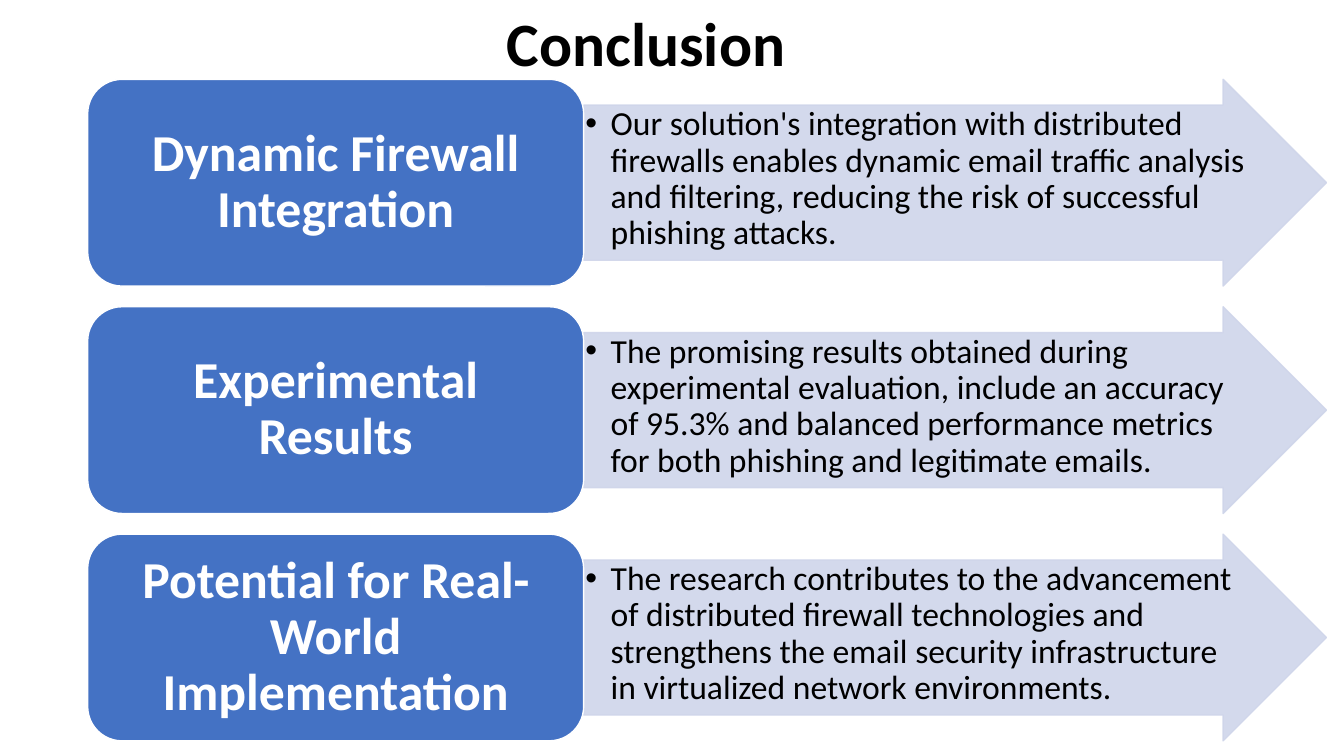
from lxml.etree import SubElement
from pptx import Presentation
from pptx.dml.color import RGBColor
from pptx.enum.shapes import MSO_SHAPE
from pptx.enum.text import MSO_ANCHOR, MSO_AUTO_SIZE, PP_ALIGN
from pptx.oxml.ns import qn
from pptx.util import Cm, Pt

BLACK = RGBColor(0x00, 0x00, 0x00)
WHITE = RGBColor(0xFF, 0xFF, 0xFF)
BLUE = RGBColor(0x44, 0x72, 0xC4)
PALE = RGBColor(0xCF, 0xD5, 0xEA)

FONT = "Calibri"
LEFT, TOP = 2.21, 2.0
BOX_W, ARROW_W = 12.5, 18.72
ROW_H, PITCH = 5.21, 5.73

ROWS = [
    ("Dynamic Firewall Integration",
     "Our solution's integration with distributed firewalls enables dynamic "
     "email traffic analysis and filtering, reducing the risk of successful "
     "phishing attacks."),
    ("Experimental Results",
     "The promising results obtained during experimental evaluation, include "
     "an accuracy of 95.3% and balanced performance metrics for both phishing "
     "and legitimate emails."),
    ("Potential for Real-World Implementation",
     "The research contributes to the advancement of distributed firewall "
     "technologies and strengthens the email security infrastructure in "
     "virtualized network environments."),
]


def write(shape, text, size, color=BLACK, bold=False, align=PP_ALIGN.CENTER,
          anchor=MSO_ANCHOR.MIDDLE, pad=(0.25, 0.13), space=1.0):
    """Put one formatted paragraph in the shape; pad is (side, top) in cm."""
    frame = shape.text_frame
    frame.word_wrap = True
    frame.vertical_anchor = anchor
    frame.margin_left = frame.margin_right = Cm(pad[0])
    frame.margin_top = frame.margin_bottom = Cm(pad[1])
    para = frame.paragraphs[0]
    para.alignment = align
    para.line_spacing = space
    run = para.add_run()
    run.text = text
    font = run.font
    font.name, font.size, font.bold = FONT, Pt(size), bold
    font.color.rgb = color
    return para


def bullet(para, indent):
    props = para._p.get_or_add_pPr()
    props.set("marL", str(indent))
    props.set("indent", str(-indent))
    SubElement(props, qn("a:buFont"), typeface="Arial")
    SubElement(props, qn("a:buChar"), char="•")


def fade(shape, percent):
    """Set the opacity of the fill and the line."""
    for color in shape._element.spPr.iter(qn("a:srgbClr")):
        SubElement(color, qn("a:alpha"), val=str(percent * 1000))


def block(slide, kind, left, top, width, fill, line):
    shape = slide.shapes.add_shape(
        kind, Cm(left), Cm(top), Cm(width), Cm(ROW_H))
    shape.shadow.inherit = False
    shape.fill.solid()
    shape.fill.fore_color.rgb = fill
    shape.line.color.rgb = line
    shape.line.width = Pt(1)
    return shape


def add_arrow(slide, top, text):
    arrow = block(slide, MSO_SHAPE.RIGHT_ARROW, LEFT + BOX_W, top, ARROW_W,
                  PALE, PALE)
    arrow.adjustments[0] = 0.75
    arrow.adjustments[1] = 0.5
    fade(arrow, 90)
    para = write(arrow, text, 24, align=PP_ALIGN.LEFT, anchor=MSO_ANCHOR.TOP,
                 pad=(0.04, 0.04), space=0.9)
    bullet(para, Cm(0.64))


def add_box(slide, top, text):
    box = block(slide, MSO_SHAPE.ROUNDED_RECTANGLE, LEFT, top, BOX_W,
                BLUE, WHITE)
    write(box, text, 37, color=WHITE, bold=True, pad=(0.38, 0.2), space=0.9)


def add_title(slide, text):
    title = slide.shapes.title
    title.left, title.top = Cm(7.82), Cm(0)
    title.width, title.height = Cm(16.94), Cm(2.13)
    write(title, text, 44, bold=True, anchor=MSO_ANCHOR.TOP)
    title.text_frame.auto_size = MSO_AUTO_SIZE.SHAPE_TO_FIT_TEXT


def main():
    deck = Presentation()
    deck.slide_width, deck.slide_height = Cm(33.87), Cm(19.05)
    slide = deck.slides.add_slide(deck.slide_layouts[5])
    add_title(slide, "Conclusion")
    for row, (head, body) in enumerate(ROWS):
        top = TOP + row * PITCH
        add_arrow(slide, top, body)
        add_box(slide, top, head)
    deck.save("out.pptx")


if __name__ == "__main__":
    main()
